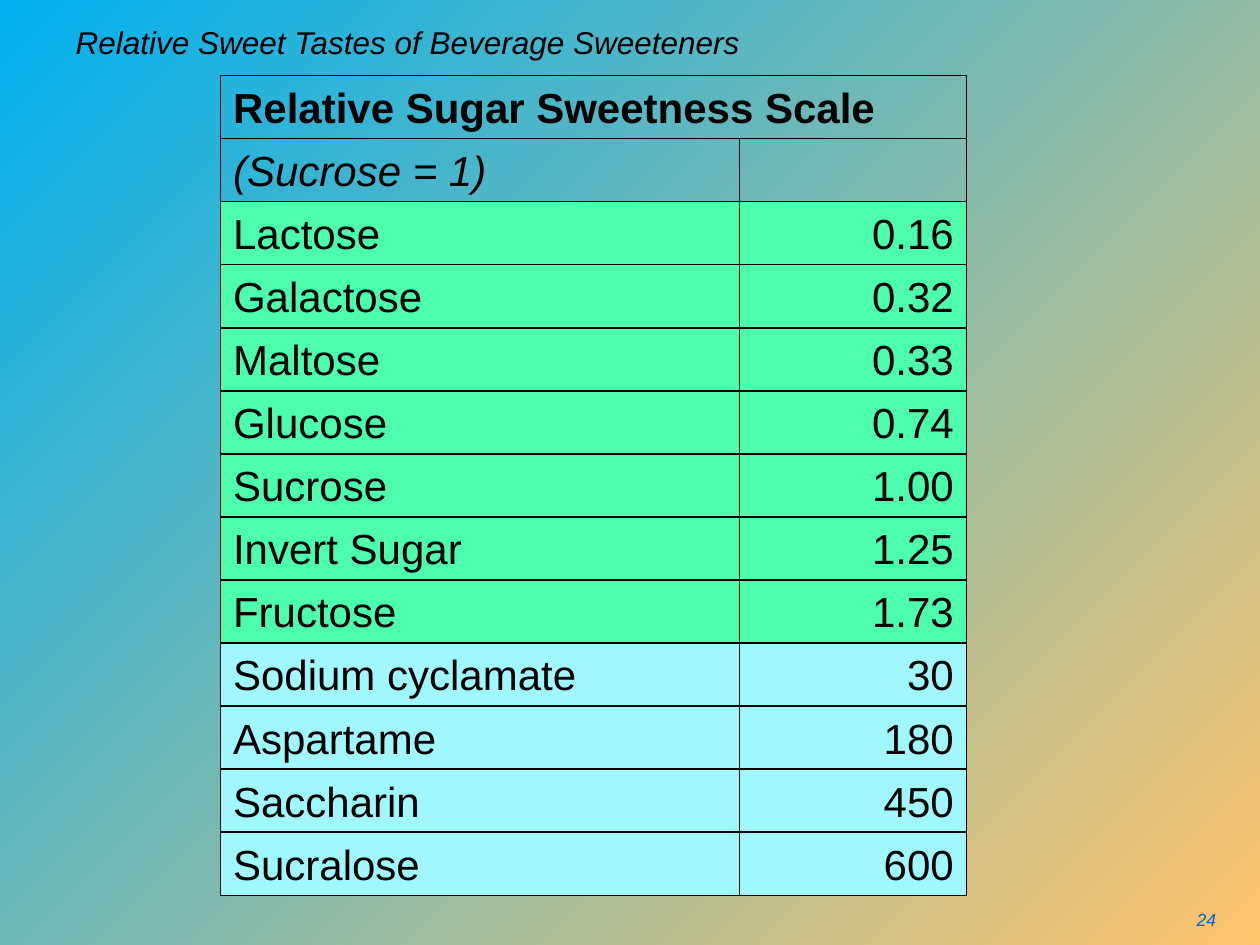
"""Build a slide with a table of the relative sweetness of beverage sweeteners."""
from dataclasses import dataclass

from lxml import etree
from pptx import Presentation
from pptx.dml.color import RGBColor
from pptx.enum.text import MSO_ANCHOR, PP_ALIGN
from pptx.oxml.ns import qn
from pptx.util import Pt

LEFT, RIGHT = PP_ALIGN.LEFT, PP_ALIGN.RIGHT
MIDDLE, BOTTOM = MSO_ANCHOR.MIDDLE, MSO_ANCHOR.BOTTOM
BLACK, SUGAR_GREEN, ARTIFICIAL_BLUE = "000000", "4BFDAC", "A0F7FE"
TITLE_ONLY = 5
BORDER_SIDES = ("a:lnL", "a:lnR", "a:lnT", "a:lnB")
COLUMN_WIDTHS = (296.6, 129.6)
ROW_HEIGHT, SUBHEAD_HEIGHT = 35.85, 25.2


@dataclass
class Row:
    """One table row."""
    name: str
    sweetness: str = ""
    fill: str = ""
    bold: bool = False
    italic: bool = False
    height: float = ROW_HEIGHT


SUGARS = (
    ("Lactose", "0.16"), ("Galactose", "0.32"), ("Maltose", "0.33"),
    ("Glucose", "0.74"), ("Sucrose", "1.00"), ("Invert Sugar", "1.25"),
    ("Fructose", "1.73"),
)
ARTIFICIALS = (
    ("Sodium cyclamate", "30"), ("Aspartame", "180"),
    ("Saccharin", "450"), ("Sucralose", "600"),
)
ROWS = [
    Row("Relative Sugar Sweetness Scale", bold=True),
    Row("(Sucrose = 1)", italic=True, height=SUBHEAD_HEIGHT),
    *(Row(name, value, SUGAR_GREEN) for name, value in SUGARS),
    *(Row(name, value, ARTIFICIAL_BLUE) for name, value in ARTIFICIALS),
]


def rgb(color: str) -> RGBColor:
    """Turn a hex string into a colour."""
    return RGBColor.from_string(color)


def write(frame, text: str, size: float, color: str = BLACK, align=LEFT,
          bold: bool = False, italic: bool = False) -> None:
    """Set and format the single paragraph of a text frame."""
    frame.text = text
    paragraph = frame.paragraphs[0]
    paragraph.alignment = align
    for run in paragraph.runs:
        font = run.font
        font.name, font.size = "Arial", Pt(size)
        font.bold, font.italic = bold, italic
        font.color.rgb = rgb(color)


def add_borders(cell) -> None:
    """Give a cell a thin black line on every side."""
    properties = cell._tc.get_or_add_tcPr()
    for position, side in enumerate(BORDER_SIDES):
        line = etree.Element(qn(side), w=str(Pt(1)))
        fill = etree.SubElement(line, qn("a:solidFill"))
        etree.SubElement(fill, qn("a:srgbClr"), val=BLACK)
        properties.insert(position, line)


def fill_cell(cell, text: str, row: Row, align) -> None:
    """Write and style one cell."""
    if text:
        write(cell.text_frame, text, 24, align=align, bold=row.bold, italic=row.italic)
    cell.vertical_anchor = BOTTOM
    if row.fill:
        cell.fill.solid()
        cell.fill.fore_color.rgb = rgb(row.fill)
    else:
        cell.fill.background()
    add_borders(cell)


def add_sweetness_table(slide) -> None:
    """Draw the sweetness scale."""
    table = slide.shapes.add_table(
        len(ROWS), len(COLUMN_WIDTHS), Pt(126), Pt(43.2),
        Pt(sum(COLUMN_WIDTHS)), Pt(sum(row.height for row in ROWS))).table
    table.first_row = table.horz_banding = False
    for column, width in zip(table.columns, COLUMN_WIDTHS):
        column.width = Pt(width)
    for index, row in enumerate(ROWS):
        table.rows[index].height = Pt(row.height)
        fill_cell(table.cell(index, 0), row.name, row, LEFT)
        fill_cell(table.cell(index, 1), row.sweetness, row, RIGHT)
    table.cell(0, 0).merge(table.cell(0, 1))


def paint_background(slide) -> None:
    """Fill the slide with a diagonal gradient."""
    fill = slide.background.fill
    fill.gradient()
    fill.gradient_angle = 315
    for stop, color in zip(fill.gradient_stops, ("00B0F0", "FFC46D")):
        stop.color.rgb = rgb(color)


def main() -> None:
    """Build and save the slide."""
    deck = Presentation()
    deck.slide_width, deck.slide_height = Pt(720), Pt(540)
    slide = deck.slides.add_slide(deck.slide_layouts[TITLE_ONLY])
    paint_background(slide)

    page_number = slide.shapes.add_textbox(Pt(660), Pt(516), Pt(42), Pt(24))
    page_number.text_frame.word_wrap = True
    write(page_number.text_frame, "24", 10, "0066CC", RIGHT, italic=True)

    title = slide.shapes.title
    title.left, title.top, title.width, title.height = Pt(36), Pt(12), Pt(648), Pt(24)
    title.text_frame.vertical_anchor = MIDDLE
    write(title.text_frame, "Relative Sweet Tastes of Beverage Sweeteners", 18, italic=True)

    add_sweetness_table(slide)
    deck.save("out.pptx")


if __name__ == "__main__":
    main()
